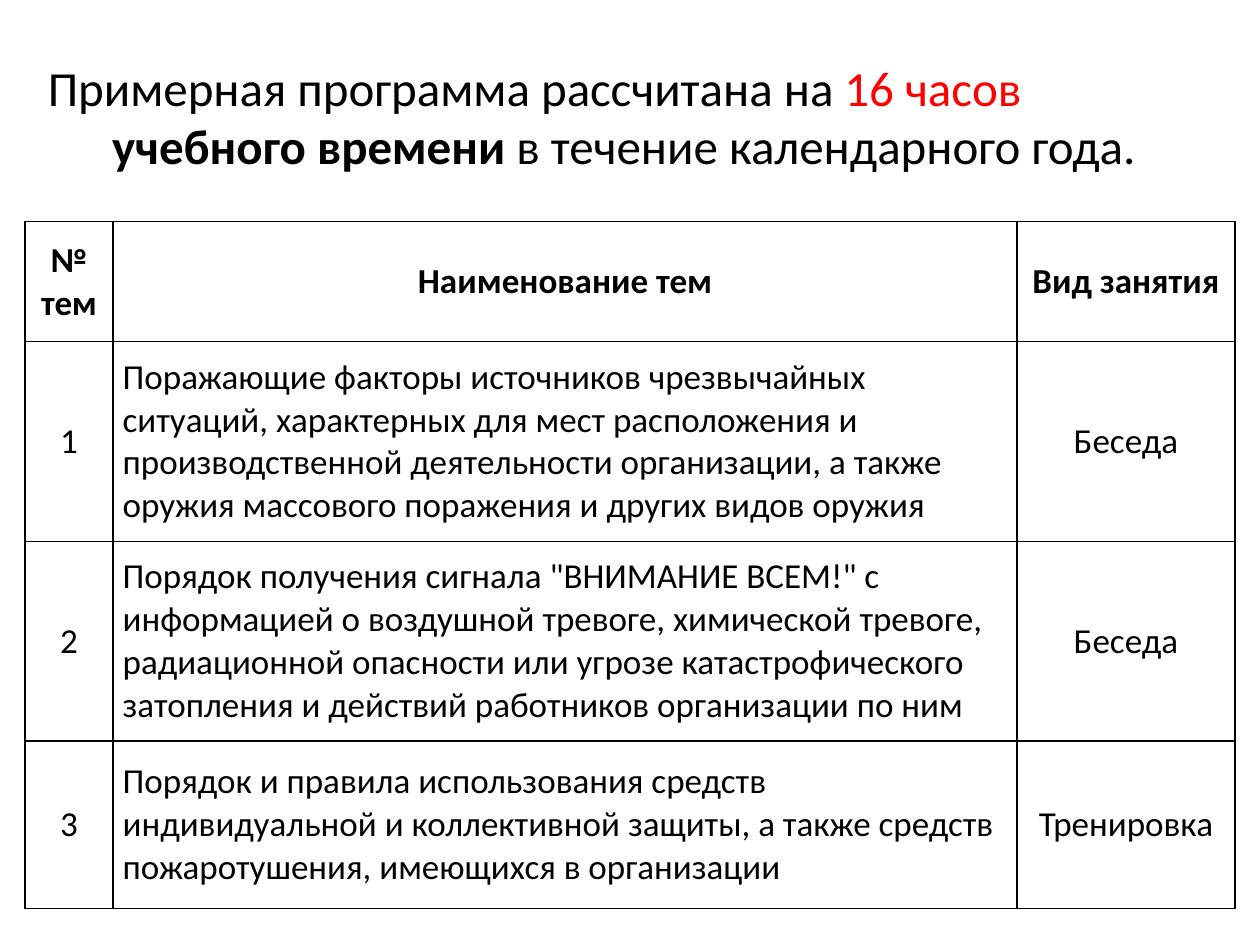
from lxml import etree
from pptx import Presentation
from pptx.dml.color import RGBColor
from pptx.enum.text import MSO_ANCHOR, PP_ALIGN
from pptx.oxml.ns import qn
from pptx.util import Pt

MIDDLE = MSO_ANCHOR.MIDDLE
LEFT, CENTER = PP_ALIGN.LEFT, PP_ALIGN.CENTER
BLACK = RGBColor(0, 0, 0)
RED = RGBColor(255, 0, 0)
WHITE = RGBColor(255, 255, 255)
FONT = "Calibri"

# text, colour, bold
TITLE = [
    ("Примерная программа рассчитана на ", BLACK, False),
    ("16 часов ", RED, False),
    ("учебного времени ", BLACK, True),
    ("в течение календарного года.", BLACK, False),
]
ROWS = [
    ("№\nтем", "Наименование тем", "Вид занятия"),
    ("1", "Поражающие факторы источников чрезвычайных ситуаций, характерных "
          "для мест расположения и производственной деятельности организации, "
          "а также оружия массового поражения и других видов оружия", "Беседа"),
    ("2", "Порядок получения сигнала \"ВНИМАНИЕ ВСЕМ!\" с информацией о воздушной "
          "тревоге, химической тревоге, радиационной опасности или угрозе "
          "катастрофического затопления и действий работников организации по ним",
     "Беседа"),
    ("3", "Порядок и правила использования средств индивидуальной и коллективной "
          "защиты, а также средств пожаротушения, имеющихся в организации",
     "Тренировка"),
]
COL_WIDTHS = [50.5, 516.5, 124.5]
ROW_HEIGHTS = [68.5, 114.2, 114.2, 95.5]


def add_run(p, text, size, color=BLACK, bold=False):
    r = p.add_run()
    r.text = text
    r.font.name, r.font.size, r.font.bold = FONT, Pt(size), bold
    r.font.color.rgb = color


def set_borders(cell):
    tc_pr = cell._tc.get_or_add_tcPr()
    # Border lines must come before the fill
    for i, side in enumerate(("lnL", "lnR", "lnT", "lnB")):
        ln = etree.Element(qn(f"a:{side}"), w=str(Pt(1)))
        fill = etree.SubElement(ln, qn("a:solidFill"))
        etree.SubElement(fill, qn("a:srgbClr"), val=str(BLACK))
        tc_pr.insert(i, ln)


def fill_cell(cell, text, is_header, is_topic):
    cell.fill.solid()
    cell.fill.fore_color.rgb = WHITE
    cell.vertical_anchor = MIDDLE
    cell.margin_left = cell.margin_right = Pt(5.4)
    cell.margin_top = cell.margin_bottom = 0
    set_borders(cell)
    tf = cell.text_frame
    for i, line in enumerate(text.split("\n")):
        p = tf.add_paragraph() if i else tf.paragraphs[0]
        p.alignment = LEFT if is_topic else CENTER
        if is_topic:
            p.space_before = p.space_after = Pt(12)
        add_run(p, line, 20, bold=is_header)


def add_title(s):
    tf = s.shapes.add_textbox(Pt(20.2), Pt(21.6), Pt(686), Pt(89.3)).text_frame
    tf.word_wrap = True
    tf.vertical_anchor = MIDDLE
    p = tf.paragraphs[0]
    p.alignment = LEFT
    p_pr = p._p.get_or_add_pPr()
    p_pr.set("marL", str(Pt(36.7)))
    p_pr.set("indent", str(-Pt(36.7)))
    for text, color, bold in TITLE:
        add_run(p, text, 28, color, bold)


def add_topics(s):
    table = s.shapes.add_table(len(ROWS), len(COL_WIDTHS), Pt(14.2), Pt(126.7),
                               Pt(sum(COL_WIDTHS)), Pt(sum(ROW_HEIGHTS))).table
    table.horz_banding = False
    for col, width in zip(table.columns, COL_WIDTHS):
        col.width = Pt(width)
    for row, height in zip(table.rows, ROW_HEIGHTS):
        row.height = Pt(height)
    for i, texts in enumerate(ROWS):
        for j, text in enumerate(texts):
            fill_cell(table.cell(i, j), text, i == 0, i > 0 and j == 1)


prs = Presentation()
prs.slide_width, prs.slide_height = Pt(720), Pt(540)
s = prs.slides.add_slide(prs.slide_layouts[6])
add_title(s)
add_topics(s)
prs.save("out.pptx")
